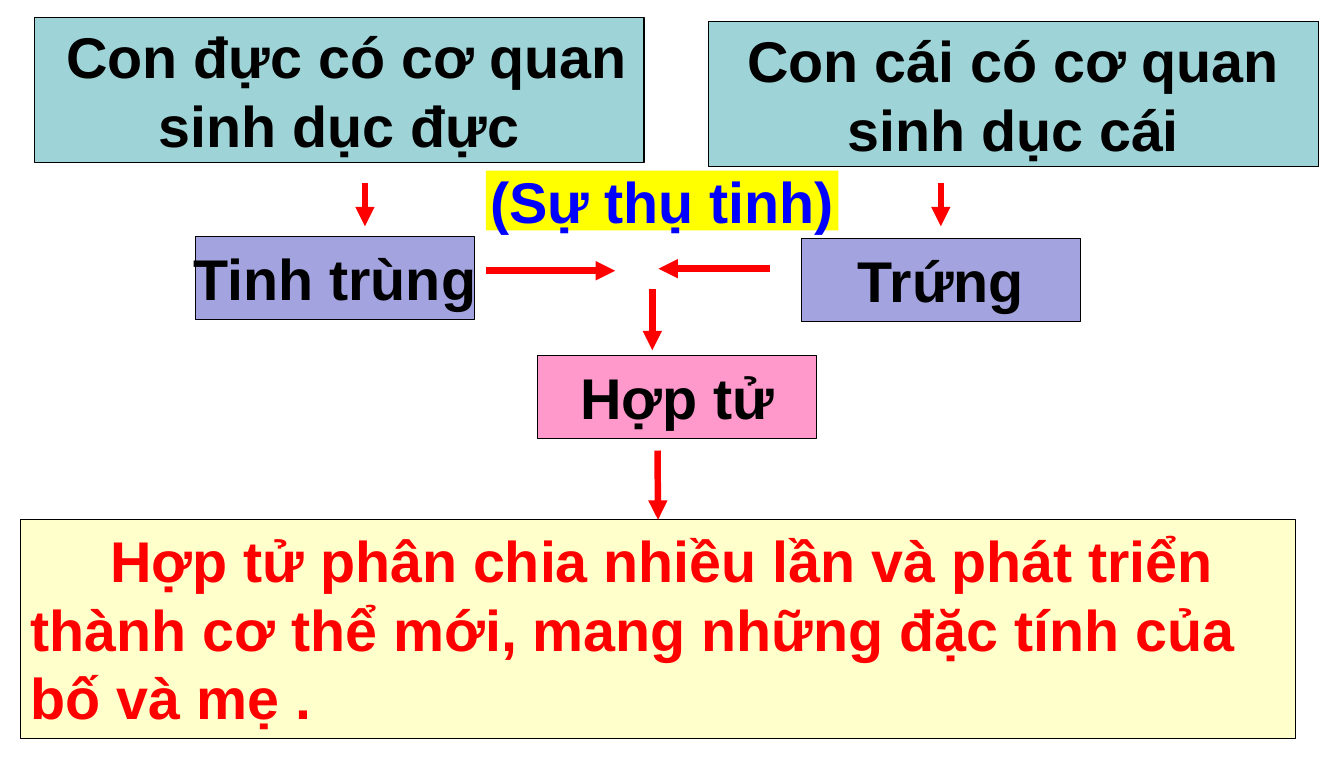
from lxml import etree
from pptx import Presentation
from pptx.dml.color import RGBColor
from pptx.enum.shapes import MSO_CONNECTOR, MSO_SHAPE
from pptx.enum.text import MSO_ANCHOR, PP_ALIGN
from pptx.oxml.ns import qn
from pptx.util import Inches, Pt

RECT = MSO_SHAPE.RECTANGLE
STRAIGHT = MSO_CONNECTOR.STRAIGHT
MIDDLE, TOP = MSO_ANCHOR.MIDDLE, MSO_ANCHOR.TOP
CENTER, LEFT = PP_ALIGN.CENTER, PP_ALIGN.LEFT

BLACK = RGBColor(0x00, 0x00, 0x00)
RED = RGBColor(0xFF, 0x00, 0x00)
BLUE = RGBColor(0x00, 0x00, 0xFF)
YELLOW = RGBColor(0xFF, 0xFF, 0x00)
TEAL = RGBColor(0x9E, 0xD3, 0xD7)
VIOLET = RGBColor(0xA3, 0xA3, 0xE0)
PINK = RGBColor(0xFF, 0x99, 0xCC)
CREAM = RGBColor(0xFF, 0xFF, 0xCC)

PARENT = (5.9, 1.4)
CELL = (2.7, 0.8)

LABEL = (["(Sự thụ tinh)"], (4.7, 1.65), (3.41, 0.58), YELLOW, BLUE)
STEPS = [
    (["Con đực có cơ quan", "sinh dục đực"], (0.33, 0.17), PARENT, TEAL, BLACK),
    (["Con cái có cơ quan", "sinh dục cái"], (6.85, 0.21), PARENT, TEAL, BLACK),
    (["Tinh trùng"], (1.89, 2.29), CELL, VIOLET, BLACK),
    (["Trứng"], (7.75, 2.31), CELL, VIOLET, BLACK),
    (["Hợp tử"], (5.2, 3.44), CELL, PINK, BLACK),
]
RESULT = (["Hợp tử phân chia nhiều lần và phát triển thành cơ thể mới, "
           "mang những đặc tính của bố và mẹ ."],
          (0.2, 5.03), (12.33, 2.12), CREAM, RED)
ARROWS = [
    ((3.53, 1.77), (3.53, 2.19)),
    ((9.1, 1.77), (9.1, 2.19)),
    ((4.7, 2.62), (5.95, 2.62)),
    ((7.45, 2.6), (6.37, 2.6)),
    ((6.31, 2.8), (6.31, 3.39)),
]
RESULT_ARROW = ((6.36, 4.36), (6.36, 5.03))


def add_box(s, lines, pos, size, fill, color, outlined=True, centered=True):
    sp = s.shapes.add_shape(RECT, *map(Inches, pos + size))
    sp.shadow.inherit = False
    sp.fill.solid()
    sp.fill.fore_color.rgb = fill
    if outlined:
        sp.line.color.rgb = BLACK
        sp.line.width = Pt(0.75)
    else:
        sp.line.fill.background()
    tf = sp.text_frame
    tf.word_wrap = not centered
    tf.vertical_anchor = MIDDLE if centered else TOP
    for i, line in enumerate(lines):
        p = tf.paragraphs[0] if i == 0 else tf.add_paragraph()
        p.alignment = CENTER if centered else LEFT
        r = p.add_run()
        r.text = line
        r.font.name = "Arial"
        r.font.size = Pt(40)
        r.font.bold = True
        r.font.color.rgb = color
    return sp


def add_arrow(s, start, end):
    line = s.shapes.add_connector(STRAIGHT, *map(Inches, start + end))
    line.line.color.rgb = RED
    line.line.width = Pt(4.5)
    ln = line.line._get_or_add_ln()
    etree.SubElement(ln, qn("a:tailEnd"), type="triangle")
    etree.SubElement(ln.getparent(), qn("a:effectLst"))
    return line


def indent(p, margin, first):
    pPr = p._p.get_or_add_pPr()
    pPr.set("marL", str(Inches(margin)))
    pPr.set("indent", str(Inches(first)))


prs = Presentation()
prs.slide_width, prs.slide_height = Inches(13), Inches(7.5)
s = prs.slides.add_slide(prs.slide_layouts[6])

add_box(s, *LABEL, outlined=False)
boxes = [add_box(s, *step) for step in STEPS]
indent(boxes[0].text_frame.paragraphs[0], 0.15, 0)
for start, end in ARROWS:
    add_arrow(s, start, end)

result = add_box(s, *RESULT, centered=False)
indent(result.text_frame.paragraphs[0], 0, 0.77)
add_arrow(s, *RESULT_ARROW).end_connect(result, 0)

prs.save("out.pptx")
